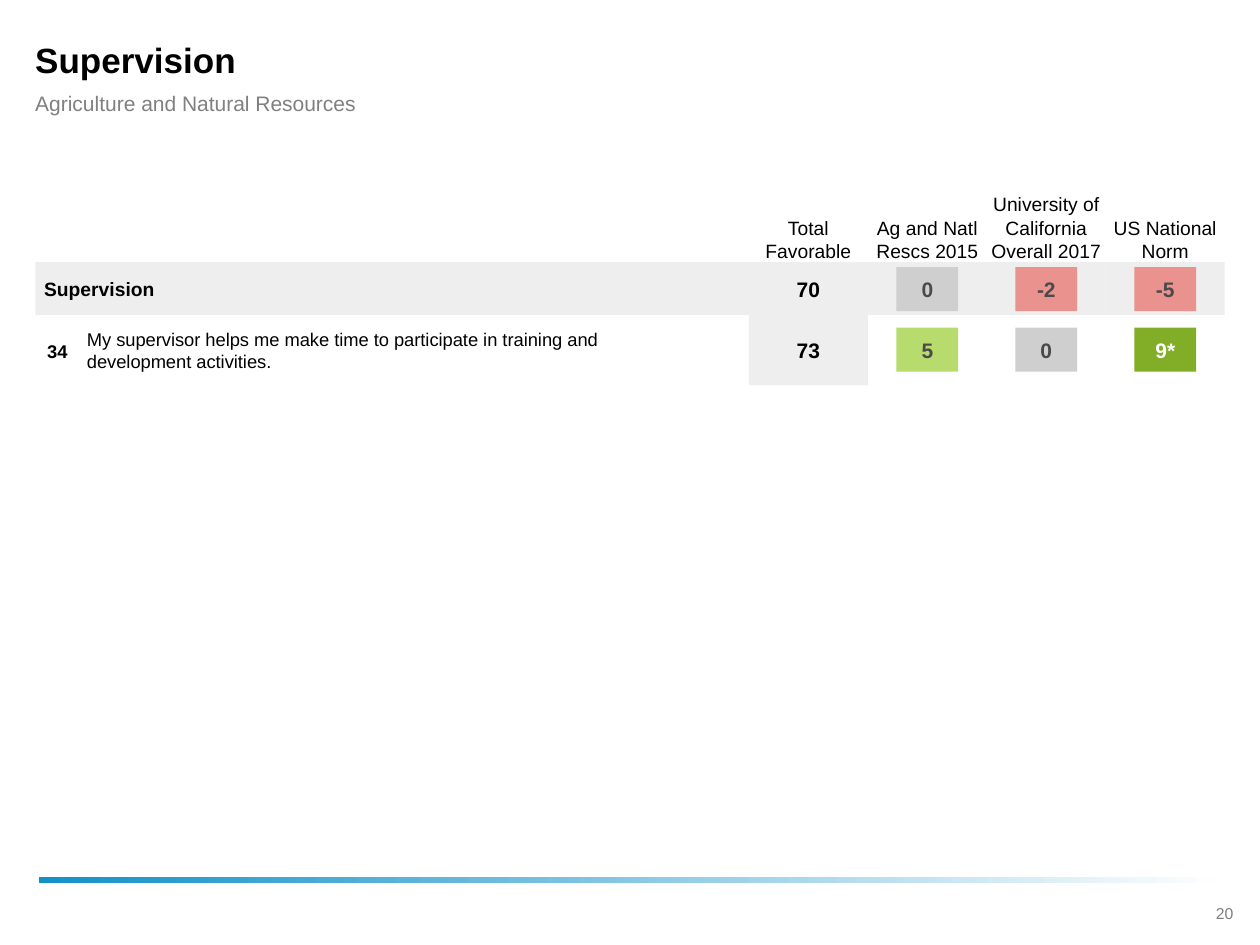
from dataclasses import dataclass

from pptx import Presentation
from pptx.dml.color import RGBColor
from pptx.enum.shapes import MSO_SHAPE
from pptx.enum.text import MSO_ANCHOR, PP_ALIGN
from pptx.util import Inches, Pt

RECT = MSO_SHAPE.RECTANGLE
LEFT, CENTER = PP_ALIGN.LEFT, PP_ALIGN.CENTER
MIDDLE, BOTTOM = MSO_ANCHOR.MIDDLE, MSO_ANCHOR.BOTTOM


@dataclass(frozen=True)
class Theme:
    font: str = "Arial"
    ink: str = "000000"
    subtitle: str = "808080"
    page: str = "7F7F7F"
    band: str = "EEEEEE"
    accent: str = "1291C7"
    white: str = "FFFFFF"
    score: str = "4A4A4A"
    same: str = "CFCFCF"
    below: str = "E9928E"
    above: str = "B7DB6C"
    well_above: str = "81AD27"
    title_size: float = 20
    value_size: float = 12
    head_size: float = 11
    item_size: float = 10.5
    page_size: float = 9


class SlideBuilder:
    """Draws styled elements on the current slide."""

    def __init__(self, slide, theme):
        self.s = slide
        self.theme = theme

    def set_text(self, sp, text, size, color, bold=False, align=LEFT,
                 anchor=MIDDLE, insets=(0, 0, 0, 0), wrap=True):
        tf = sp.text_frame
        tf.word_wrap = wrap
        tf.vertical_anchor = anchor
        tf.margin_left, tf.margin_top, tf.margin_right, tf.margin_bottom = map(Inches, insets)
        p = tf.paragraphs[0]
        p.alignment = align
        r = p.add_run()
        r.text = text
        r.font.name = self.theme.font
        r.font.size = Pt(size)
        r.font.bold = bold
        r.font.color.rgb = RGBColor.from_string(color)

    def label(self, box, text, size, color=None, **style):
        sp = self.s.shapes.add_textbox(*map(Inches, box))
        self.set_text(sp, text, size, color or self.theme.ink, **style)

    def block(self, box, color):
        sp = self.s.shapes.add_shape(RECT, *map(Inches, box))
        sp.shadow.inherit = False
        sp.line.fill.background()
        sp.fill.solid()
        sp.fill.fore_color.rgb = RGBColor.from_string(color)
        return sp

    def tile(self, box, text, fill, color):
        self.set_text(self.block(box, fill), text, self.theme.value_size, color, bold=True,
                      align=CENTER, insets=(0, 0.05, 0, 0.05), wrap=False)

    def fade(self, box, start, end):
        sp = self.block(box, start)
        sp.fill.gradient()
        sp.fill.gradient_angle = 0
        for stop, position, color in zip(sp.fill.gradient_stops, (0, 1), (start, end)):
            stop.position = position
            stop.color.rgb = RGBColor.from_string(color)


def main():
    prs = Presentation()
    prs.slide_width, prs.slide_height = Inches(10), Inches(7.5)
    t = Theme()
    b = SlideBuilder(prs.slides.add_slide(prs.slide_layouts[6]), t)

    left, width = 0.28, 9.44
    col_w = width / 10
    cols = [left + col_w * i for i in range(6, 10)]
    band_top, band_h = 2.08, 0.42
    name_box = (left, band_top, col_w * 6, band_h)
    tile_w, tile_h = 0.49, 0.35

    b.fade((0.31, 6.96, 9.42, 0.05), t.accent, t.white)
    b.label((9.46, 7.12, 0.52, 0.25), "20", t.page_size, t.page, align=CENTER,
            insets=(0.1, 0.05, 0.1, 0.05))
    b.label((left, 0.28, width, 0.38), "Supervision", t.title_size, bold=True,
            insets=(0, 0, 0.35, 0))
    b.label((left, 0.71, width, 0.21), "Agriculture and Natural Resources",
            t.value_size, t.subtitle, insets=(0, 0, 0.35, 0))

    b.block((cols[0], band_top + band_h, col_w, 0.56), t.band)
    b.block(name_box, t.band)
    heads = ("Total Favorable", "Ag and Natl Rescs 2015",
             "University of California Overall 2017", "US National Norm")
    for x, head in zip(cols, heads):
        b.block((x, band_top, col_w, band_h), t.band)
        b.label((x, 0.97, col_w, 1.11), head, t.head_size, align=CENTER, anchor=BOTTOM)

    b.label(name_box, "Supervision", t.head_size, bold=True, insets=(0.07, 0, 0.07, 0))
    b.label((left, 2.68, 0.35, 0.22), "34", t.item_size, bold=True, align=CENTER)
    b.label((0.62, 2.55, 5.1, 0.46),
            "My supervisor helps me make time to participate in training and "
            "development activities.", t.item_size, insets=(0.07, 0, 0.35, 0))

    rows = (
        (2.12, "70", (("0", t.same, t.score), ("-2", t.below, t.score),
                      ("-5", t.below, t.score))),
        (2.6, "73", (("5", t.above, t.score), ("0", t.same, t.score),
                     ("9*", t.well_above, t.white))),
    )
    for top, total, scores in rows:
        b.label((cols[0], top + 0.08, col_w, 0.19), total, t.value_size,
                bold=True, align=CENTER)
        for x, score in zip(cols[1:], scores):
            b.tile((x + (col_w - tile_w) / 2, top, tile_w, tile_h), *score)

    prs.save("out.pptx")


if __name__ == "__main__":
    main()
